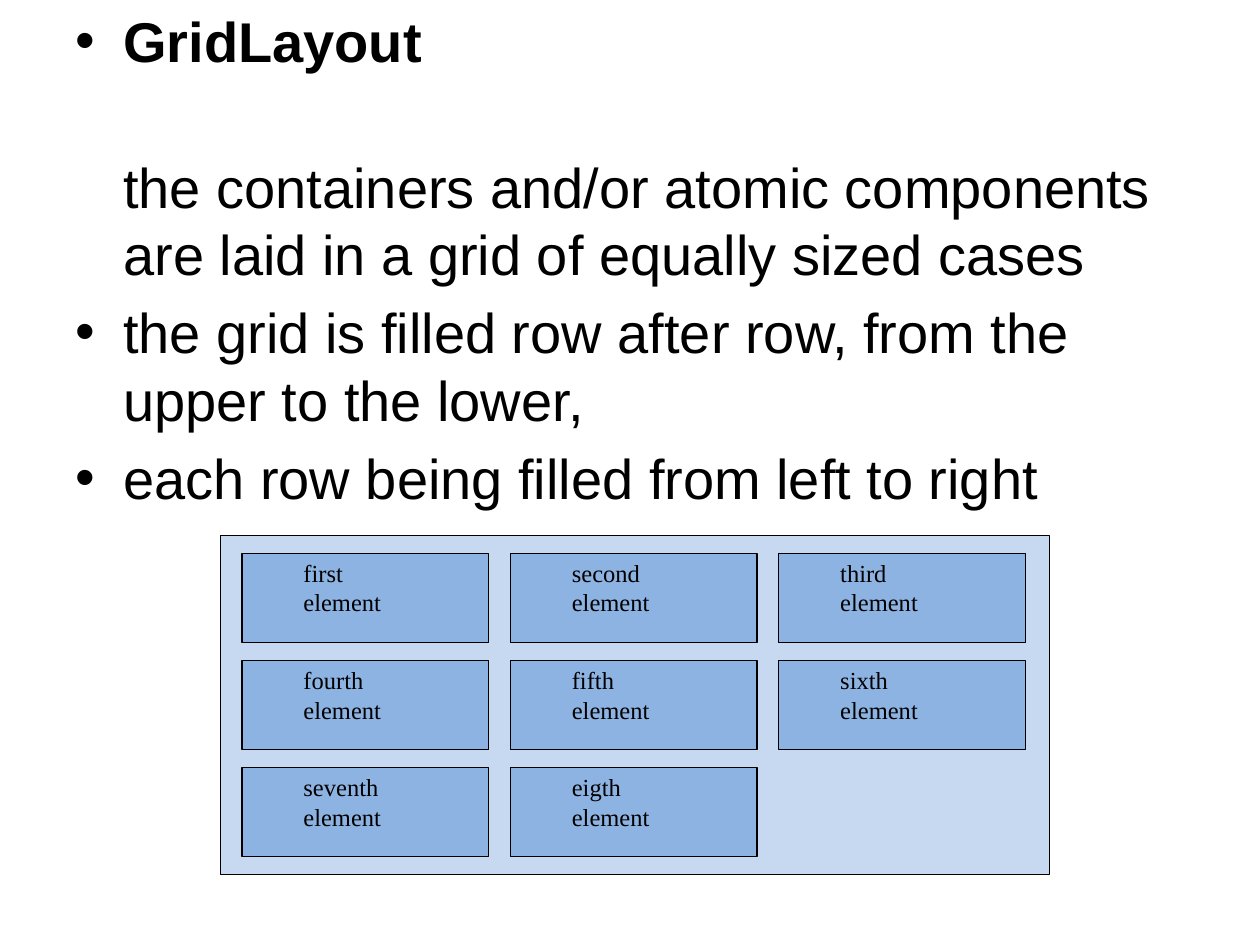
from dataclasses import dataclass

import pptx
import pptx.dml.color
import pptx.enum.shapes
import pptx.util
from lxml import etree
from pptx.oxml.ns import qn

Inches = pptx.util.Inches
Pt = pptx.util.Pt


@dataclass(frozen=True)
class Theme:
    ink: str = "000000"
    panel: str = "C6D9F1"
    cell: str = "8DB3E2"
    body_font: str = "Arial"
    body_size: int = 32
    label_font: str = "Times New Roman"
    label_size: int = 14
    line_width: float = 0.75


THEME = Theme()
PARAGRAPH_GAP = 6.4
SECTION_GAP = 45

# text, bold, bulleted, points before
BODY = [
    ("GridLayout", True, True, PARAGRAPH_GAP),
    ("the containers and/or atomic components are laid in a grid of equally sized cases",
     False, False, SECTION_GAP),
    ("the grid is filled row after row, from the upper to the lower,", False, True, PARAGRAPH_GAP),
    ("each row being filled from left to right", False, True, PARAGRAPH_GAP),
]
ORDINALS = ["first", "second", "third", "fourth", "fifth", "sixth", "seventh", "eigth"]
COLUMNS = 3
GRID_LEFT, GRID_TOP = 1.92, 4.39
COLUMN_STEP, ROW_STEP = 2.13, 0.85


def color(value):
    return pptx.dml.color.RGBColor.from_string(value)


def style_font(paragraph, name, size, bold=False):
    paragraph.font.name = name
    paragraph.font.size = Pt(size)
    paragraph.font.bold = bold
    paragraph.font.color.rgb = color(THEME.ink)


def set_bullet(paragraph, bulleted):
    """Indent the paragraph and hang a bullet in front of it if asked."""
    properties = paragraph._p.get_or_add_pPr()
    properties.set("marL", str(Inches(0.38)))
    properties.set("indent", str(Inches(-0.38 if bulleted else 0)))
    if bulleted:
        etree.SubElement(properties, qn("a:buFont")).set("typeface", THEME.body_font)
        etree.SubElement(properties, qn("a:buChar")).set("char", "•")
    else:
        etree.SubElement(properties, qn("a:buNone"))


def add_text_frame(shapes, left, top, width, height):
    box = shapes.add_textbox(Inches(left), Inches(top), Inches(width), Inches(height))
    box.text_frame.word_wrap = True
    return box.text_frame


def add_body(slide):
    frame = add_text_frame(slide.shapes, 0.5, 0, 9, 6.7)
    frame.text = "\n".join(text for text, *_ in BODY)
    for paragraph, (_, bold, bulleted, gap) in zip(frame.paragraphs, BODY):
        paragraph.space_before = Pt(gap)
        set_bullet(paragraph, bulleted)
        style_font(paragraph, THEME.body_font, THEME.body_size, bold)


def add_rectangle(shapes, left, top, width, height, fill):
    shape = shapes.add_shape(
        pptx.enum.shapes.MSO_SHAPE.RECTANGLE,
        Inches(left), Inches(top), Inches(width), Inches(height))
    shape.shadow.inherit = False
    shape.fill.solid()
    shape.fill.fore_color.rgb = color(fill)
    shape.line.color.rgb = color(THEME.ink)
    shape.line.width = Pt(THEME.line_width)


def add_cell(shapes, left, top, ordinal):
    add_rectangle(shapes, left, top, 1.96, 0.71, THEME.cell)
    frame = add_text_frame(shapes, left + 0.39, top - 0.01, 1.25, 0.67)
    frame.text = f"{ordinal}\nelement"
    for paragraph in frame.paragraphs:
        style_font(paragraph, THEME.label_font, THEME.label_size)


def add_grid(slide):
    shapes = slide.shapes.add_group_shape().shapes
    add_rectangle(shapes, 1.75, 4.25, 6.58, 2.69, THEME.panel)
    for index, ordinal in enumerate(ORDINALS):
        row, column = divmod(index, COLUMNS)
        add_cell(shapes, GRID_LEFT + column * COLUMN_STEP, GRID_TOP + row * ROW_STEP, ordinal)


def main():
    presentation = pptx.Presentation()
    presentation.slide_width = Inches(10)
    presentation.slide_height = Inches(7.5)
    slide = presentation.slides.add_slide(presentation.slide_layouts[6])
    add_body(slide)
    add_grid(slide)
    presentation.save("out.pptx")


if __name__ == "__main__":
    main()
